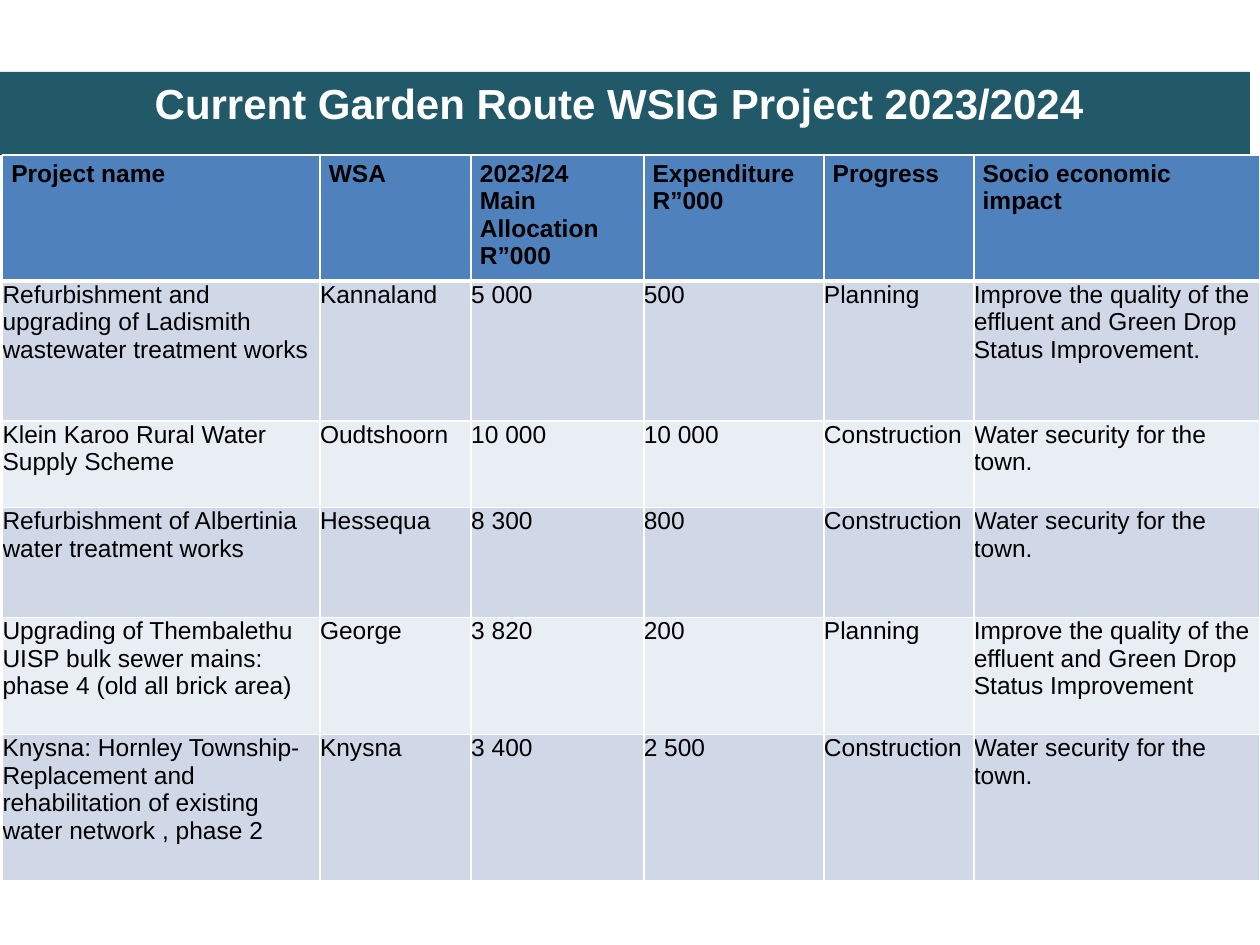
"""Build the slide on current Garden Route WSIG projects."""
import lxml.etree
import pptx
import pptx.dml.color
import pptx.enum.shapes
import pptx.enum.text
import pptx.oxml.ns
import pptx.util

Inches = pptx.util.Inches
Pt = pptx.util.Pt
qn = pptx.oxml.ns.qn


def paint(fill, color):
    fill.solid()
    fill.fore_color.rgb = pptx.dml.color.RGBColor.from_string(color)


def write(frame, text, size=14, color="000000", bold=False, align=None, inset=(0, 0)):
    frame.word_wrap = True
    for number, line in enumerate(text.split("\n")):
        paragraph = frame.add_paragraph() if number else frame.paragraphs[0]
        paragraph.alignment = align
        run = paragraph.add_run()
        run.text = line
        run.font.name = "Arial"
        run.font.size = Pt(size)
        run.font.bold = bold
        paint(run.font.fill, color)


prs = pptx.Presentation()
prs.slide_width = Inches(10)
prs.slide_height = Inches(7.5)
slide = prs.slides.add_slide(prs.slide_layouts[6])

banner = slide.shapes.add_shape(
    pptx.enum.shapes.MSO_SHAPE.RECTANGLE, 0, Inches(0.57), Inches(9.92), Inches(0.66)
)
banner.shadow.inherit = False
paint(banner.fill, "215968")
banner.line.fill.background()
banner.text_frame.vertical_anchor = pptx.enum.text.MSO_ANCHOR.TOP
write(banner.text_frame, "Current Garden Route WSIG Project 2023/2024 ", size=24,
      color="FFFFFF", bold=True, align=pptx.enum.text.PP_ALIGN.CENTER)

projects = [
    ("Project name", "WSA", "2023/24\nMain Allocation\nR”000", "Expenditure R”000",
     "Progress", "Socio economic impact"),
    ("Refurbishment and upgrading of Ladismith wastewater treatment works", "Kannaland",
     "5 000", "500", "Planning",
     "Improve the quality of the effluent and Green Drop Status Improvement."),
    ("Klein Karoo Rural Water Supply Scheme", "Oudtshoorn", "10 000", "10 000",
     "Construction", "Water security for the town."),
    ("Refurbishment of Albertinia water treatment works", "Hessequa", "8 300", "800",
     "Construction", "Water security for the town."),
    ("Upgrading of Thembalethu UISP bulk sewer mains: phase 4 (old all brick area)",
     "George", "3 820", "200", "Planning",
     "Improve the quality of the effluent and Green Drop Status Improvement"),
    ("Knysna: Hornley Township- Replacement and rehabilitation of existing "
     "water network , phase 2", "Knysna", "3 400", "2 500", "Construction",
     "Water security for the town."),
]
column_widths = [2.52, 1.2, 1.37, 1.43, 1.19, 2.27]
row_heights = [1, 1.11, 0.69, 0.87, 0.93, 1.16]

project_table = slide.shapes.add_table(
    len(row_heights), len(column_widths), Inches(0.02), Inches(1.23),
    Inches(sum(column_widths)), Inches(sum(row_heights))
).table
for column, width in zip(project_table.columns, column_widths):
    column.width = Inches(width)

for row_number, (row, height, project) in enumerate(
        zip(project_table.rows, row_heights, projects)):
    row.height = Inches(height)
    header = row_number == 0
    row_fill = "4F81BD" if header else ("E9EDF4", "D0D8E8")[row_number % 2]
    for cell, text in zip(row.cells, project):
        cell.margin_left = cell.margin_right = Inches(0.07 if header else 0)
        cell.margin_top = cell.margin_bottom = Inches(0.04 if header else 0)
        write(cell.text_frame, text, bold=header)
        properties = cell._tc.get_or_add_tcPr()
        for side in ("lnL", "lnR", "lnT", "lnB"):
            width = 3 if header and side == "lnB" else 1
            border = lxml.etree.SubElement(properties, qn("a:" + side), w=str(Pt(width)))
            border_fill = lxml.etree.SubElement(border, qn("a:solidFill"))
            lxml.etree.SubElement(border_fill, qn("a:srgbClr"), val="FFFFFF")
        paint(cell.fill, row_fill)

prs.save("out.pptx")
